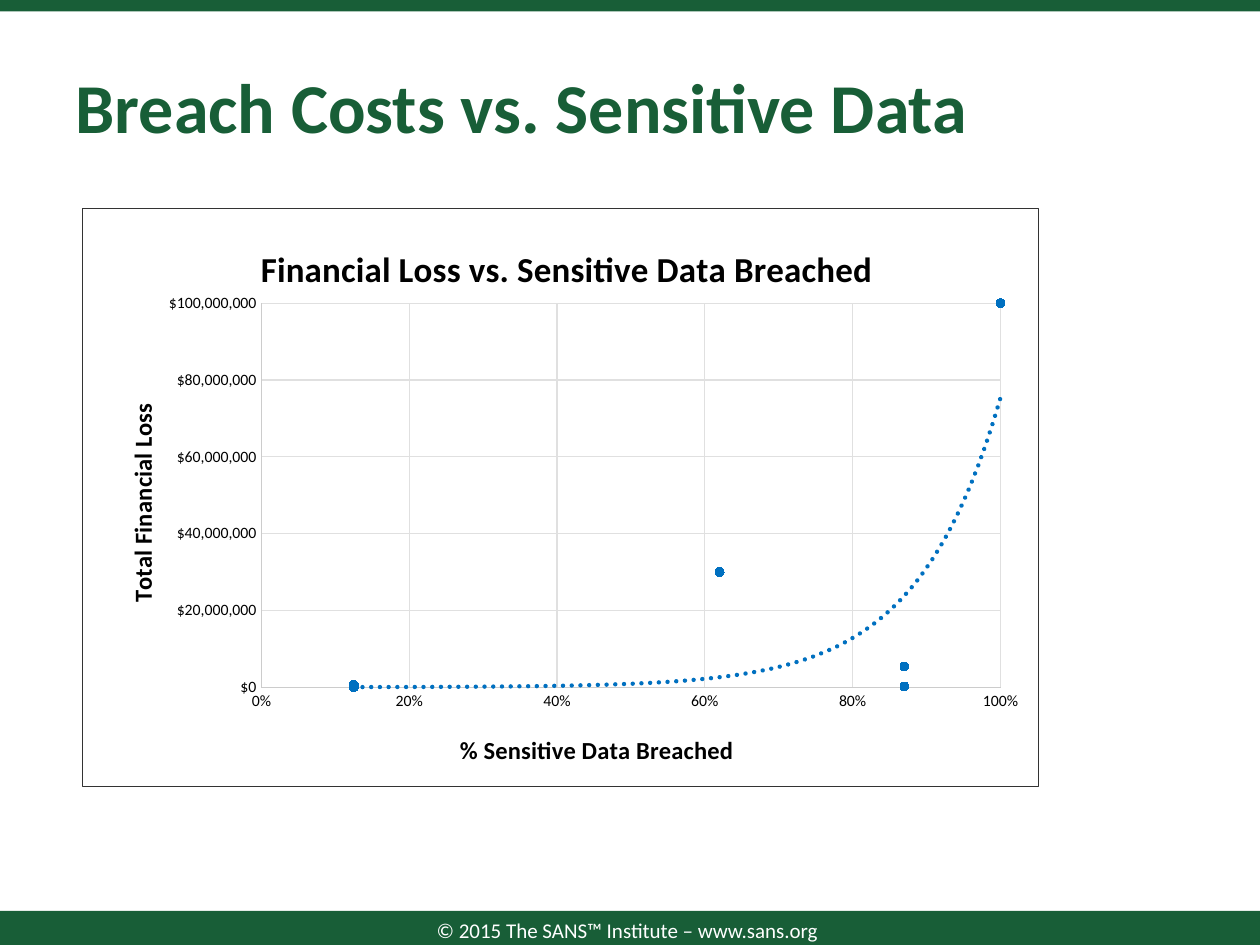
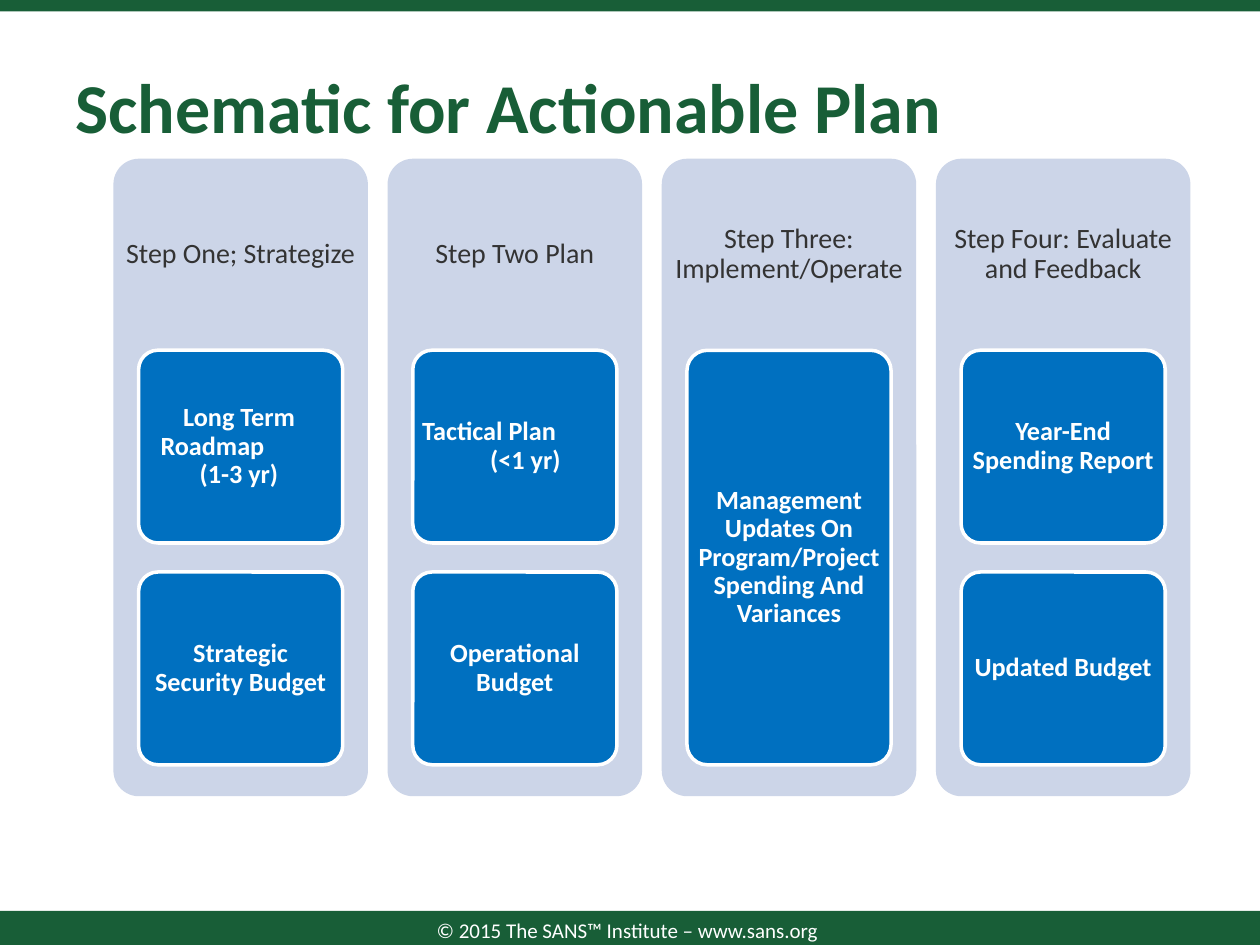
from lxml import etree
from pptx import Presentation
from pptx import util as u
from pptx.chart.data import XyChartData
from pptx.dml.color import RGBColor
from pptx.enum import chart as charts, shapes, text
from pptx.oxml import parse_xml
from pptx.oxml.ns import nsdecls, qn

COLOURS = {
    "green": "185E37", "white": "FFFFFF", "blue": "0070C0", "panel": "CCD5E8",
    "ink": "333333", "black": "000000", "axis": "CCCCCC", "grid": "E0E0E0",
}
FONT = "Calibri"
COLUMNS, ROWS = 100, 75
FOOTER = "© 2015 The SANS™ Institute – www.sans.org"

# Text formats
TITLE = {"size": u.Pt(40), "bold": True, "colour": "green"}
FOOT = {"size": u.Pt(12), "bold": False, "colour": "white"}
STEP = {"size": u.Pt(16), "bold": False, "colour": "ink"}
TASK = {"size": u.Pt(15), "bold": True, "colour": "white"}
CHART_TITLE = {"size": u.Pt(20), "bold": True, "colour": "black"}
AXIS_TITLE = {"size": u.Pt(14), "bold": True, "colour": "black"}
TICKS = {"size": u.Pt(9), "bold": False, "colour": "black"}

# Total loss by share of sensitive data breached
LOSSES = [(0.125, 5000), (0.125, 10000), (0.87, 200000), (0.125, 600000),
          (0.87, 5400000), (0.62, 30000000)] + [(1, 100000000)] * 14

# Each step has its tasks; a task with uneven lines lists them with indents
STEPS = [
    ("Step One; Strategize",
     [[("Long Term", 0.28), ("Roadmap", 0.1), ("(1-3 yr)", 0.41)],
      "Strategic Security Budget"]),
    ("Step Two Plan",
     [[("Tactical Plan", 0), ("(<1 yr)", 0.54)], "Operational Budget"]),
    ("Step Three: Implement/Operate",
     ["Management Updates On Program/Project Spending And Variances"]),
    ("Step Four: Evaluate and Feedback",
     ["Year-End Spending Report", "Updated Budget"]),
]


def colour(name):
    return RGBColor.from_string(COLOURS[name])


def apply_font(font, style):
    font.name = FONT
    for key, value in style.items():
        if key == "colour":
            font.color.rgb = colour(value)
        else:
            setattr(font, key, value)


def set_line(line, name, points):
    line.color.rgb = colour(name)
    line.width = u.Pt(points)


def set_layout(part, index, inner=False, **shares):
    """Place a chart part by shares of the chart's size."""
    old = part.find(qn("c:layout"))
    if old is not None:
        part.remove(old)
    layout = etree.Element(qn("c:layout"))
    manual = etree.SubElement(layout, qn("c:manualLayout"))
    if inner:
        etree.SubElement(manual, qn("c:layoutTarget"), val="inner")
    for mode in ("xMode", "yMode"):
        etree.SubElement(manual, qn(f"c:{mode}"), val="edge")
    for key, share in shares.items():
        etree.SubElement(manual, qn(f"c:{key}"), val=str(share))
    part.insert(index, layout)


class Pages:
    def __init__(self):
        self.deck = Presentation()
        self.deck.slide_width, self.deck.slide_height = u.Inches(10), u.Inches(7.5)
        self.page = None

    def at(self, left, top, width, height):
        column = self.deck.slide_width / COLUMNS
        row = self.deck.slide_height / ROWS
        return [round(n) for n in
                (left * column, top * row, width * column, height * row)]

    def start(self, title):
        self.page = self.deck.slides.add_slide(self.deck.slide_layouts[5])
        # Bands and footer
        self.shape((0, 72.3, COLUMNS, 2.7), "green")
        self.shape((0, 0, COLUMNS, 0.9), "green")
        self.label((30.3, 72.4, 39, 2.8), FOOTER, FOOT)
        # Title
        box = self.page.shapes.title
        box.left, box.top, box.width, box.height = self.at(5, 3, 90, 10.7)
        self.fill_text(box, title, TITLE, align=text.PP_ALIGN.LEFT)

    def fill_text(self, box, content, style, inset=None, spacing=None,
                  align=text.PP_ALIGN.CENTER):
        frame = box.text_frame
        frame.word_wrap = True
        frame.auto_size = text.MSO_AUTO_SIZE.NONE
        frame.vertical_anchor = text.MSO_ANCHOR.MIDDLE
        if inset is not None:
            for side in ("left", "right", "top", "bottom"):
                setattr(frame, f"margin_{side}", u.Inches(inset))
        indented = isinstance(content, list)
        lines = content if indented else [(content, 0)]
        for i, (words, indent) in enumerate(lines):
            para = frame.paragraphs[0] if i == 0 else frame.add_paragraph()
            para.alignment = text.PP_ALIGN.LEFT if indented else align
            if indented:
                para._p.get_or_add_pPr().set("marL", str(u.Inches(indent)))
            if spacing:
                para.line_spacing = spacing
            span = para.add_run()
            span.text = words
            apply_font(span.font, style)

    def label(self, place, content, style, **options):
        box = self.page.shapes.add_textbox(*self.at(*place))
        self.fill_text(box, content, style, **options)

    def shape(self, place, fill, rounded=False, border=None):
        kind = shapes.MSO_SHAPE
        box = self.page.shapes.add_shape(
            kind.ROUNDED_RECTANGLE if rounded else kind.RECTANGLE, *self.at(*place))
        box.shadow.inherit = False
        box.fill.solid()
        box.fill.fore_color.rgb = colour(fill)
        if rounded:
            box.adjustments[0] = 0.1
        if border:
            set_line(box.line, border, 2)
        else:
            box.line.fill.background()
        return box

    def scatter(self, place, points):
        data = XyChartData()
        series = data.add_series("Series 1")
        for x, y in points:
            series.add_data_point(x, y)
        chart = self.page.shapes.add_chart(
            charts.XL_CHART_TYPE.XY_SCATTER, *self.at(*place), data).chart
        chart.has_legend = False
        apply_font(chart.font, {"size": u.Pt(10), "colour": "ink"})
        chart.plots[0].vary_by_categories = False
        self.frame_chart(chart)
        self.mark_series(chart.plots[0].series[0])
        return chart

    def frame_chart(self, chart):
        root = chart._chartSpace
        root.find(qn("c:chart")).addnext(parse_xml(
            f'<c:spPr {nsdecls("c", "a")}>'
            f'<a:solidFill><a:srgbClr val="{COLOURS["white"]}"/></a:solidFill>'
            f'<a:ln w="9525"><a:solidFill><a:srgbClr val="{COLOURS["ink"]}"/>'
            '</a:solidFill></a:ln></c:spPr>'))
        set_layout(next(root.iter(qn("c:plotArea"))), 0, inner=True,
                   x=0.187, y=0.164, w=0.773, h=0.664)

    def mark_series(self, series):
        series.smooth = False
        series.format.line.fill.background()
        marker = series.marker
        marker.style, marker.size = charts.XL_MARKER_STYLE.CIRCLE, 5
        marker.format.fill.solid()
        marker.format.fill.fore_color.rgb = colour("blue")
        set_line(marker.format.line, "blue", 0.75)
        # Exponential trend line
        series._element.find(qn("c:xVal")).addprevious(parse_xml(
            f'<c:trendline {nsdecls("c", "a")}><c:spPr>'
            '<a:ln w="31750" cap="rnd"><a:solidFill>'
            f'<a:srgbClr val="{COLOURS["blue"]}"/></a:solidFill>'
            '<a:prstDash val="sysDot"/></a:ln></c:spPr>'
            '<c:trendlineType val="exp"/><c:dispRSqr val="0"/>'
            '<c:dispEq val="0"/></c:trendline>'))

    def chart_heading(self, owner, words, style, x, y, turned=False):
        owner.has_title = True
        title = owner.chart_title if hasattr(owner, "chart_title") else owner.axis_title
        para = title.text_frame.paragraphs[0]
        span = para.add_run()
        span.text = words
        apply_font(span.font, style)
        if turned:
            body = next(title._element.iter(qn("a:bodyPr")))
            body.set("rot", "-5400000")
            body.set("vert", "horz")
        set_layout(title._element, 1, x=x, y=y)

    def axis(self, axis, top, step, number_format):
        axis.minimum_scale, axis.maximum_scale, axis.major_unit = 0, top, step
        axis.major_tick_mark = axis.minor_tick_mark = charts.XL_TICK_MARK.NONE
        axis.has_major_gridlines = True
        set_line(axis.major_gridlines.format.line, "grid", 0.75)
        set_line(axis.format.line, "axis", 0.75)
        labels = axis.tick_labels
        labels.number_format, labels.number_format_is_linked = number_format, False
        apply_font(labels.font, TICKS)


def build_costs(pages):
    pages.start("Breach Costs vs. Sensitive Data")
    chart = pages.scatter((6.5, 16.5, 76, 46), LOSSES)
    across, up = chart.category_axis, chart.value_axis
    pages.axis(across, 1, 0.2, "0%")
    pages.axis(up, 100000000, 20000000, '"$"#,##0')
    pages.chart_heading(chart, "Financial Loss vs. Sensitive Data Breached",
                        CHART_TITLE, 0.18, 0.05)
    pages.chart_heading(across, "% Sensitive Data Breached", AXIS_TITLE, 0.39, 0.9)
    pages.chart_heading(up, "Total Financial Loss", AXIS_TITLE, 0.04, 0.33, turned=True)


def build_plan(pages):
    pages.start("Schematic for Actionable Plan")
    left, top, width, pitch = 9, 12.6, 20.2, 21.76
    task_top, task_area, gap = 27.8, 32.9, 2.3
    for i, (step, tasks) in enumerate(STEPS):
        x = left + i * pitch
        pages.shape((x, top, width, 50.6), "panel", rounded=True)
        pages.label((x, top, width, 15.2), step, STEP, inset=0.07, spacing=0.9)
        # Tasks share the height below the step's name
        height = (task_area - gap * (len(tasks) - 1)) / len(tasks)
        for j, task in enumerate(tasks):
            place = (x + 2, task_top + j * (height + gap), 16.2, height)
            box = pages.shape(place, "blue", rounded=True, border="white")
            pages.fill_text(box, task, TASK, inset=0.03, spacing=0.9)


def main():
    pages = Pages()
    build_costs(pages)
    build_plan(pages)
    pages.deck.save("out.pptx")


if __name__ == "__main__":
    main()
